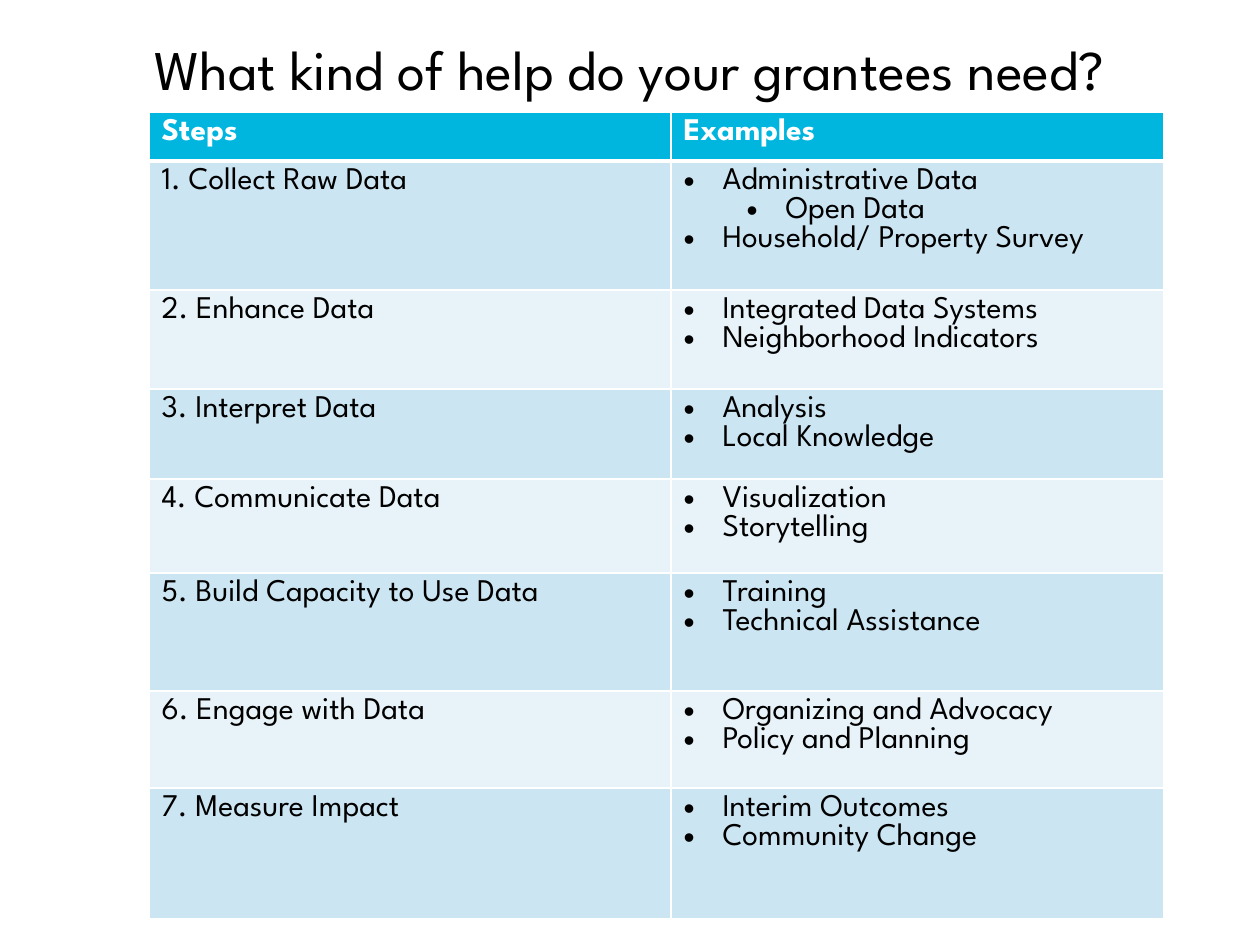
from lxml import etree
from pptx import Presentation, util as u
from pptx.dml.color import RGBColor
from pptx.enum import text
from pptx.oxml.ns import qn

# Content: each example is (outline level, wording)
TITLE = "What kind of help do your grantees need?"
HEADERS = ("Steps", "Examples")
STEPS = [
    ("Collect Raw Data", [(0, "Administrative Data"), (1, "Open Data"),
                          (0, "Household/ Property Survey")]),
    ("Enhance Data", [(0, "Integrated Data Systems"), (0, "Neighborhood Indicators")]),
    ("Interpret Data", [(0, "Analysis"), (0, "Local Knowledge")]),
    ("Communicate Data", [(0, "Visualization"), (0, "Storytelling")]),
    ("Build Capacity to Use Data", [(0, "Training"), (0, "Technical Assistance")]),
    ("Engage with Data", [(0, "Organizing and Advocacy"), (0, "Policy and Planning")]),
    ("Measure Impact", [(0, "Interim Outcomes"), (0, "Community Change")]),
]

# Layout in px
EMU_PER_PX = 914400 / 126
SLIDE_SIZE = (1260, 945)
TITLE_BOX = (0, 28, 1260, 146)
TITLE_INSET = 7
TABLE_LEFT, TABLE_TOP = 149, 112
COLUMN_WIDTHS = (522, 493)
ROW_HEIGHTS = (49, 129, 99, 90, 94, 118, 97, 131)
BULLET_INDENT, LEVEL_INDENT = 39, 63

# Format
FONT = "League Spartan"
BLACK = RGBColor(0x00, 0x00, 0x00)
WHITE = RGBColor(0xFF, 0xFF, 0xFF)
HEADER_BLUE = RGBColor(0x00, 0xB6, 0xDE)
BANDS = (RGBColor(0xCC, 0xE5, 0xF2), RGBColor(0xE7, 0xF3, 0xF9))
HEADER_FONT = {"name": FONT, "size": u.Pt(18), "bold": True}
BODY_FONT = {"name": FONT, "size": u.Pt(18), "bold": False}
TITLE_FONT = {"name": FONT, "size": u.Pt(32), "bold": False}


def px(length):
    return u.Emu(round(length * EMU_PER_PX))


def add_text(paragraph, wording, font_format, color):
    run = paragraph.add_run()
    run.text = wording
    for name, value in font_format.items():
        setattr(run.font, name, value)
    run.font.color.rgb = color


def add_bullet(paragraph, level):
    paragraph.level = level
    properties = paragraph._p.get_or_add_pPr()
    properties.set("marL", str(px(BULLET_INDENT + level * LEVEL_INDENT)))
    properties.set("indent", str(-px(BULLET_INDENT)))
    etree.SubElement(properties, qn("a:buFont"), typeface="Arial")
    etree.SubElement(properties, qn("a:buChar"), char="•")


def format_cell(cell, fill_color, edge_widths):
    properties = cell._tc.get_or_add_tcPr()
    for edge, width in edge_widths.items():
        line = etree.SubElement(properties, qn(f"a:ln{edge}"), w=str(u.Pt(width)))
        fill = etree.SubElement(line, qn("a:solidFill"))
        etree.SubElement(fill, qn("a:srgbClr"), val=str(WHITE))
    cell.fill.solid()
    cell.fill.fore_color.rgb = fill_color


def add_title(slide):
    title = slide.shapes.title
    title.left, title.top, title.width, title.height = map(px, TITLE_BOX)
    frame = title.text_frame
    frame.auto_size = text.MSO_AUTO_SIZE.NONE
    frame.vertical_anchor = text.MSO_ANCHOR.TOP
    frame.margin_top = px(TITLE_INSET)
    paragraph = frame.paragraphs[0]
    paragraph.alignment = text.PP_ALIGN.CENTER
    add_text(paragraph, TITLE, TITLE_FONT, BLACK)


def add_steps_table(slide):
    table = slide.shapes.add_table(
        len(ROW_HEIGHTS), len(COLUMN_WIDTHS), px(TABLE_LEFT), px(TABLE_TOP),
        px(sum(COLUMN_WIDTHS)), px(sum(ROW_HEIGHTS))).table
    for column, width in zip(table.columns, COLUMN_WIDTHS):
        column.width = px(width)
    for row, height in zip(table.rows, ROW_HEIGHTS):
        row.height = px(height)

    # Header row, with a thick line below it
    for cell, header in zip(table.rows[0].cells, HEADERS):
        add_text(cell.text_frame.paragraphs[0], header, HEADER_FONT, WHITE)
        format_cell(cell, HEADER_BLUE, {"L": 1, "R": 1, "T": 1, "B": 3})

    # Numbered steps with bulleted examples, in alternating bands
    for number, (step, examples) in enumerate(STEPS, 1):
        step_cell, example_cell = table.rows[number].cells
        add_text(step_cell.text_frame.paragraphs[0], f"{number}. {step}", BODY_FONT, BLACK)
        frame = example_cell.text_frame
        for index, (level, example) in enumerate(examples):
            paragraph = frame.add_paragraph() if index else frame.paragraphs[0]
            add_bullet(paragraph, level)
            add_text(paragraph, example, BODY_FONT, BLACK)
        top_width = 3 if number == 1 else 1
        for cell in (step_cell, example_cell):
            format_cell(cell, BANDS[(number - 1) % 2],
                        {"L": 1, "R": 1, "T": top_width, "B": 1})


def main():
    presentation = Presentation()
    presentation.slide_width, presentation.slide_height = map(px, SLIDE_SIZE)
    slide = presentation.slides.add_slide(presentation.slide_layouts.get_by_name("Title Only"))
    add_title(slide)
    add_steps_table(slide)
    presentation.save("out.pptx")


if __name__ == "__main__":
    main()
